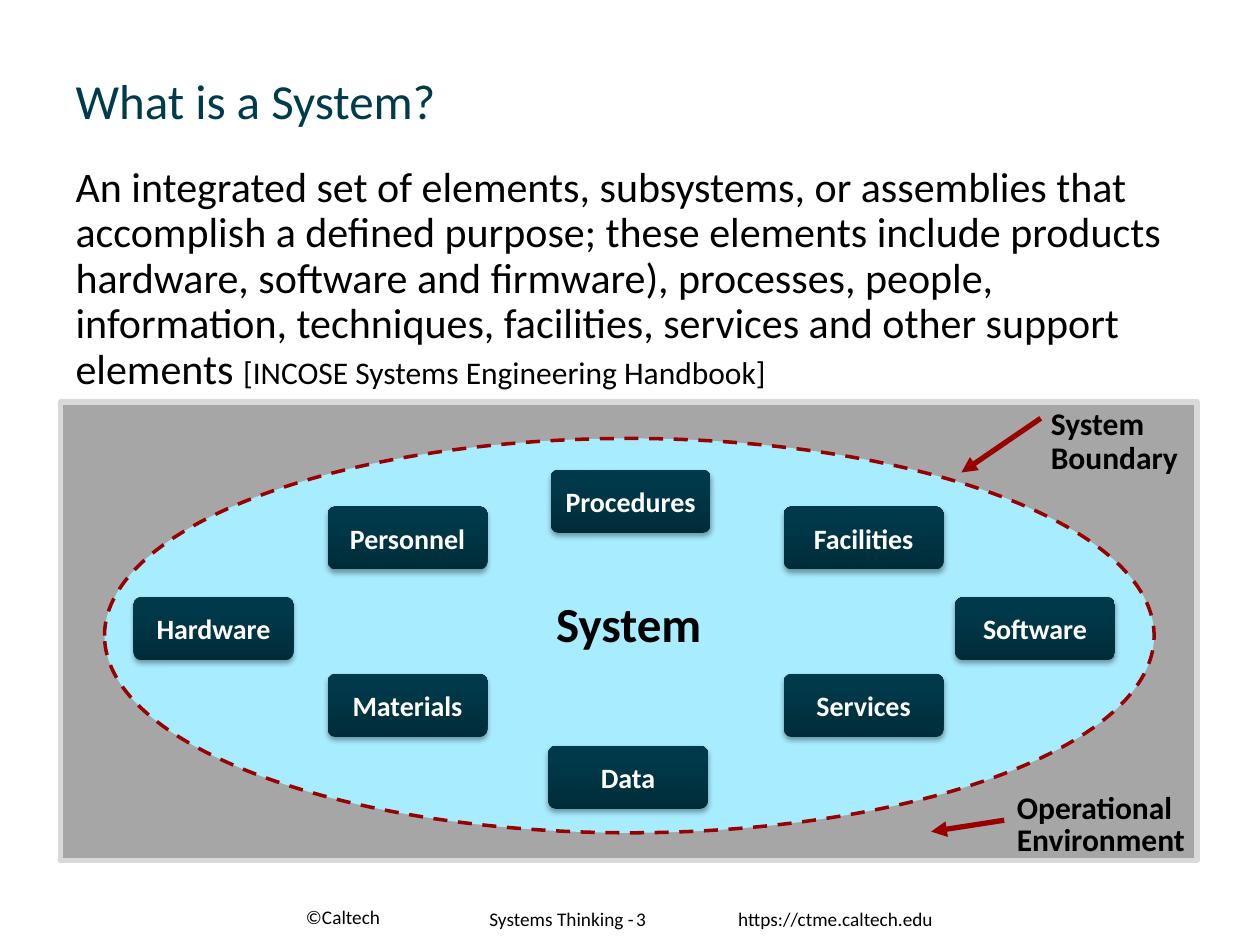
from lxml.etree import SubElement
from pptx import Presentation
from pptx.dml.color import RGBColor
from pptx.enum.dml import MSO_LINE
from pptx.enum.shapes import MSO_CONNECTOR, MSO_SHAPE
from pptx.enum.text import MSO_ANCHOR, MSO_AUTO_SIZE, PP_ALIGN
from pptx.oxml.ns import qn
from pptx.util import Inches, Pt

BLACK = RGBColor(0x00, 0x00, 0x00)
WHITE = RGBColor(0xFF, 0xFF, 0xFF)
TITLE_TEAL = RGBColor(0x00, 0x3B, 0x4C)
BOX_DARK = RGBColor(0x00, 0x2C, 0x39)
BOX_LIGHT = RGBColor(0x00, 0x39, 0x4A)
ENVIRONMENT_GRAY = RGBColor(0xA6, 0xA6, 0xA6)
FRAME_GRAY = RGBColor(0xD9, 0xD9, 0xD9)
SYSTEM_BLUE = RGBColor(0xA8, 0xEC, 0xFF)
BOUNDARY_RED = RGBColor(0x99, 0x00, 0x00)

DEFINITION = (
    "An integrated set of elements, subsystems, or assemblies that accomplish "
    "a defined purpose; these elements include products hardware, software and "
    "firmware), processes, people, information, techniques, facilities, "
    "services and other support elements "
)
SOURCE = "[INCOSE Systems Engineering Handbook]"

ELEMENT_WIDTH, ELEMENT_HEIGHT = 1.27, 0.5
ELEMENTS = [
    ("Procedures", 4.37, 3.73),
    ("Hardware", 1.06, 4.74),
    ("Software", 7.58, 4.74),
    ("Personnel", 2.6, 4.02),
    ("Facilities", 6.22, 4.02),
    ("Materials", 2.6, 5.35),
    ("Data", 4.35, 5.92),
    ("Services", 6.22, 5.35),
]


def write_text(shape, *lines, size=18, color=BLACK, bold=False, font="Calibri",
               align=PP_ALIGN.LEFT, anchor=MSO_ANCHOR.TOP, spacing=None,
               wrap=True, margins=(0.1, 0.05), auto_size=MSO_AUTO_SIZE.NONE):
    """Write one paragraph per line; a line is a string or a list of (text, size) runs."""
    frame = shape.text_frame
    frame.word_wrap = wrap
    frame.auto_size = auto_size
    frame.vertical_anchor = anchor
    frame.margin_left = frame.margin_right = Inches(margins[0])
    frame.margin_top = frame.margin_bottom = Inches(margins[1])
    for index, line in enumerate(lines):
        paragraph = frame.add_paragraph() if index else frame.paragraphs[0]
        paragraph.alignment = align
        paragraph.space_before = Pt(0)
        if spacing:
            paragraph.line_spacing = spacing
        for text, run_size in [(line, size)] if isinstance(line, str) else line:
            run = paragraph.add_run()
            run.text = text
            run.font.name = font
            run.font.size = Pt(run_size)
            run.font.bold = bold
            run.font.color.rgb = color


class SlideBuilder:
    def __init__(self, slide):
        self.slide = slide

    def placeholder(self, index, place, *lines, **text_format):
        shape = self.slide.placeholders[index]
        shape.left, shape.top, shape.width, shape.height = map(Inches, place)
        write_text(shape, *lines, **text_format)
        return shape

    def body(self, place, *lines, **text_format):
        shape = self.placeholder(1, place, *lines, **text_format)
        for paragraph in shape.text_frame.paragraphs:
            properties = paragraph._p.get_or_add_pPr()
            properties.set("marL", "0")
            properties.set("indent", "0")
            SubElement(properties, qn("a:buNone"))

    def text(self, place, *lines, **text_format):
        box = self.slide.shapes.add_textbox(*map(Inches, place))
        write_text(box, *lines, **text_format)

    def shape(self, kind, place, fill=None, line=None, line_width=1, dash=None):
        shape = self.slide.shapes.add_shape(kind, *map(Inches, place))
        shape.shadow.inherit = False
        if fill is None:
            shape.fill.background()
        else:
            shape.fill.solid()
            shape.fill.fore_color.rgb = fill
        if line is None:
            shape.line.fill.background()
        else:
            shape.line.color.rgb = line
            shape.line.width = Pt(line_width)
            shape.line.dash_style = dash
        return shape

    def element(self, name, left, top):
        """Add a rounded box with a vertical gradient and a soft shadow."""
        box = self.shape(MSO_SHAPE.ROUNDED_RECTANGLE,
                         (left, top, ELEMENT_WIDTH, ELEMENT_HEIGHT))
        box.adjustments[0] = 0.125
        box.fill.gradient()
        box.fill.gradient_angle = 90
        stops = zip(box.fill.gradient_stops, (0, 0.8), (BOX_DARK, BOX_LIGHT))
        for stop, position, color in stops:
            stop.position = position
            stop.color.rgb = color
        effects = box._element.spPr.find(qn("a:effectLst"))
        shadow = SubElement(effects, qn("a:outerShdw"), blurRad=str(Pt(3.1)),
                            dist=str(Pt(1.8)), dir="5400000", rotWithShape="0")
        shadow_color = SubElement(shadow, qn("a:srgbClr"), val=str(BLACK))
        SubElement(shadow_color, qn("a:alpha"), val="35000")
        write_text(box, name, size=16, color=WHITE, bold=True, wrap=False,
                   align=PP_ALIGN.CENTER, anchor=MSO_ANCHOR.MIDDLE,
                   margins=(0.09, 0.05))

    def arrow(self, start, end):
        arrow = self.slide.shapes.add_connector(
            MSO_CONNECTOR.STRAIGHT, *map(Inches, start + end))
        arrow.line.color.rgb = BOUNDARY_RED
        arrow.line.width = Pt(3)
        SubElement(arrow.line._get_or_add_ln(), qn("a:tailEnd"), type="triangle")
        SubElement(arrow._element.spPr, qn("a:effectLst"))


def main():
    presentation = Presentation()
    presentation.slide_width, presentation.slide_height = Inches(10), Inches(7.5)
    builder = SlideBuilder(presentation.slides.add_slide(presentation.slide_layouts[1]))

    builder.placeholder(0, (0.5, 0.08, 9, 1), "What is a System?", size=28,
                        color=TITLE_TEAL, anchor=MSO_ANCHOR.BOTTOM, spacing=0.9)
    builder.body((0.5, 1.27, 9, 5.61), [(DEFINITION, 24), (SOURCE, 18)], spacing=0.9)

    label = dict(bold=True, wrap=False, auto_size=MSO_AUTO_SIZE.SHAPE_TO_FIT_TEXT)
    builder.shape(MSO_SHAPE.RECTANGLE, (0.48, 3.19, 9.02, 3.64),
                  ENVIRONMENT_GRAY, FRAME_GRAY, 3)
    builder.text((8, 6.27, 1.48, 0.57), "Operational", "Environment",
                 spacing=0.85, margins=(0.07, 0.03), **label)
    builder.shape(MSO_SHAPE.OVAL, (0.83, 3.48, 8.33, 3.13),
                  SYSTEM_BLUE, BOUNDARY_RED, 2, MSO_LINE.DASH)
    for name, left, top in ELEMENTS:
        builder.element(name, left, top)
    center = builder.shape(MSO_SHAPE.OVAL, (4.31, 4.25, 1.36, 1.38))
    write_text(center, "System", size=28, bold=True, wrap=False,
               align=PP_ALIGN.CENTER, anchor=MSO_ANCHOR.MIDDLE, margins=(0.09, 0.05))
    builder.arrow((7.97, 6.51), (7.39, 6.6))
    builder.arrow((8.26, 3.32), (7.63, 3.75))
    builder.text((8.25, 3.19, 1.21, 0.64), "System", "Boundary",
                 spacing=0.9, margins=(0.09, 0.05), **label)

    builder.text((2.33, 7.17, 1.17, 0.25), "©Caltech", size=11, anchor=MSO_ANCHOR.BOTTOM)
    builder.text((3.64, 7.17, 1.49, 0.25), "Systems Thinking -", size=11,
                 align=PP_ALIGN.RIGHT, anchor=MSO_ANCHOR.MIDDLE)
    builder.text((4.95, 7.17, 0.67, 0.25), "3", size=11, anchor=MSO_ANCHOR.MIDDLE)
    builder.text((5.76, 7.15, 2.02, 0.29), "https://ctme.caltech.edu", size=11)

    presentation.save("out.pptx")


if __name__ == "__main__":
    main()
